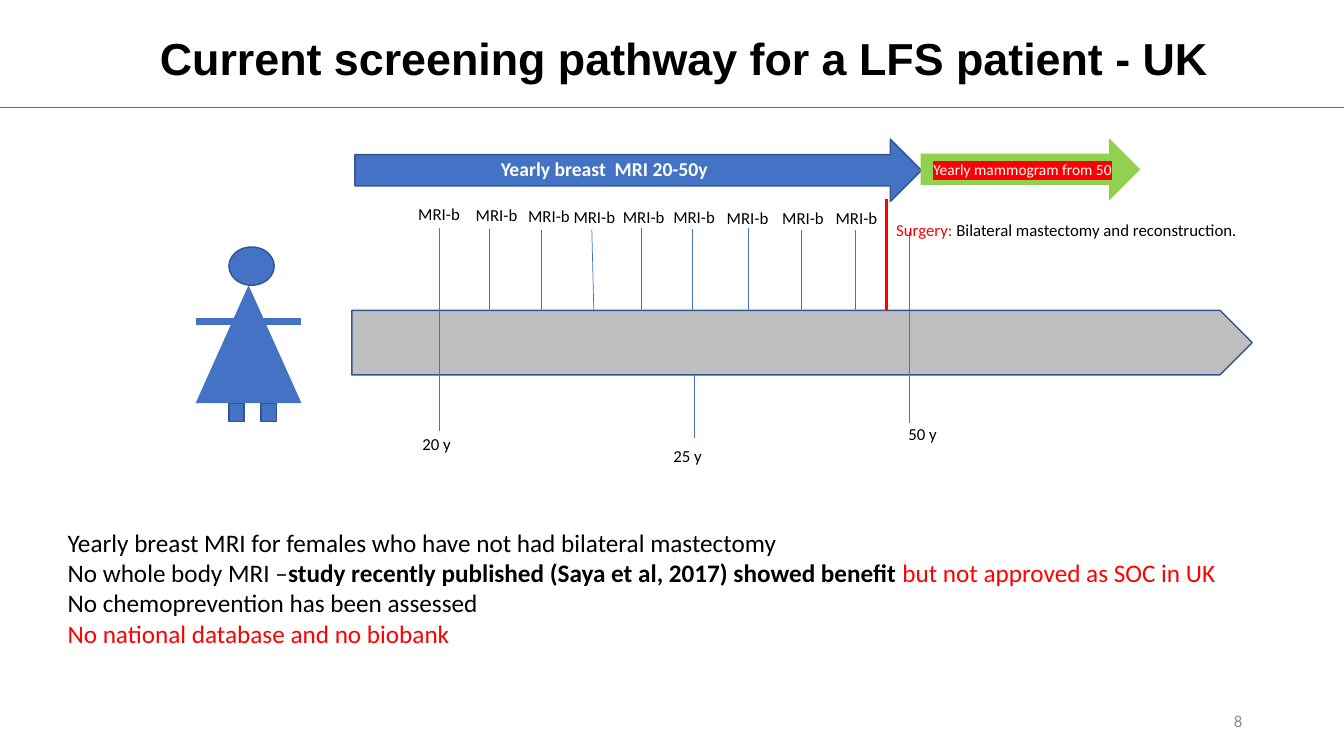
from dataclasses import dataclass
from typing import Any

from lxml.etree import SubElement
from pptx import Presentation
from pptx.dml.color import RGBColor
from pptx.enum.shapes import MSO_CONNECTOR, MSO_SHAPE as Preset
from pptx.enum.text import MSO_ANCHOR as Anchor, MSO_AUTO_SIZE as AutoSize, PP_ALIGN as Align
from pptx.oxml.ns import qn
from pptx.util import Emu, Pt

EMU_PER_PX = 9144  # 100 px to the inch
BLUE, EDGE, GREY, GREEN = "4472C4", "325491", "BFBFBF", "92D050"
BLACK, WHITE, RED, PALE = "000000", "FFFFFF", "FF0000", "8C8C8C"
INSETS = {"margin_left": 10, "margin_right": 10, "margin_top": 5, "margin_bottom": 5}


@dataclass(frozen=True)
class Box:
    left: int
    top: int
    width: int
    height: int


@dataclass(frozen=True)
class Piece:
    text: str
    color: str = BLACK
    bold: bool = False


@dataclass(frozen=True)
class Block:
    preset: Preset
    box: Box
    fill: str
    edge: str | None = EDGE


@dataclass(frozen=True)
class Rule:
    start: tuple[int, int]
    end: tuple[int, int]
    color: str = BLUE
    weight: float = 0.5


@dataclass(frozen=True)
class Label:
    box: Box
    pieces: tuple[Piece, ...]
    size: int = 12
    align: Align = Align.LEFT
    anchor: Anchor = Anchor.TOP


SCREENING_ARROW = Block(Preset.RIGHT_ARROW, Box(352, 138, 562, 62), BLUE)
MAMMOGRAM_ARROW = Block(Preset.RIGHT_ARROW, Box(913, 137, 218, 62), GREEN, None)
LIFELINE = Block(Preset.PENTAGON, Box(349, 308, 893, 64), GREY)
WOMAN = (
    Block(Preset.OVAL, Box(227, 245, 45, 38), BLUE),
    Block(Preset.ISOSCELES_TRIANGLE, Box(194, 283, 105, 117), BLUE, None),
    *(Block(Preset.RECTANGLE, Box(left, 400, 15, 18), BLUE) for left in (227, 259)),
)
ARMS = Rule((194, 319), (299, 319), BLUE, 4.5)

SCAN_TICKS = ((485, 227), (537, 228), (587, 228), (636, 226),
              (687, 227), (742, 226), (795, 228), (848, 228))
RULES = (
    Rule((0, 107), (1333, 107)),
    Rule((436, 226), (436, 428)),
    Rule((689, 372), (689, 435)),
    Rule((902, 230), (902, 420)),
    *(Rule((x, top), (589 if x == 587 else x, 309)) for x, top in SCAN_TICKS),
    Rule((879, 197), (879, 309), RED, 2.25),
)

SCAN_LABELS = ((405, 197), (462, 198), (514, 199), (559, 200), (608, 200),
               (658, 200), (711, 201), (766, 201), (819, 201))
AGES = (("20 y", 409, 425), ("25 y", 658, 437), ("50 y", 891, 415))
LABELS = (
    Label(Box(380, 151, 439, 34), (Piece("Yearly breast  MRI 20-50y", WHITE, True),),
          14, Align.CENTER),
    *(Label(Box(left, top, 70, 30), (Piece("MRI-b"),)) for left, top in SCAN_LABELS),
    *(Label(Box(left, top, 145, 30), (Piece(age),)) for age, left, top in AGES),
    Label(Box(879, 213, 401, 30),
          (Piece("Surgery: ", RED), Piece("Bilateral mastectomy and reconstruction."))),
    Label(Box(942, 695, 300, 40), (Piece("8", PALE),), 12, Align.RIGHT, Anchor.MIDDLE),
)

FINDINGS = (
    (Piece("Yearly breast MRI for females who have not had bilateral mastectomy"),),
    (Piece("No whole body MRI –"),
     Piece("study recently published (Saya et al, 2017) showed benefit ", bold=True),
     Piece("but not approved as SOC in UK", RED)),
    (Piece("No chemoprevention has been assessed"),),
    (Piece("No national database and no biobank", RED),),
)


def px(length: int) -> Emu:
    return Emu(length * EMU_PER_PX)


def rgb(color: str) -> RGBColor:
    return RGBColor.from_string(color)


def apply(target: Any, values: dict[str, Any]) -> None:
    for name, value in values.items():
        setattr(target, name, value)


def bounds(box: Box) -> tuple[Emu, ...]:
    return px(box.left), px(box.top), px(box.width), px(box.height)


def place(placeholder: Any, box: Box) -> None:
    apply(placeholder, dict(zip(("left", "top", "width", "height"), bounds(box))))


def set_frame(frame: Any, anchor: Anchor) -> None:
    apply(frame, {"word_wrap": True, "auto_size": AutoSize.NONE, "vertical_anchor": anchor})
    apply(frame, {side: px(inset) for side, inset in INSETS.items()})


def write(paragraph: Any, pieces: tuple[Piece, ...], size: int,
          align: Align = Align.LEFT, font: str = "Calibri") -> None:
    paragraph.alignment = align
    for piece in pieces:
        run = paragraph.add_run()
        run.text = piece.text
        apply(run.font, {"size": Pt(size), "bold": piece.bold, "name": font})
        run.font.color.rgb = rgb(piece.color)


def highlight(run: Any, color: str) -> None:
    properties = run.font._element
    marker = SubElement(properties, qn("a:highlight"))
    SubElement(marker, qn("a:srgbClr"), val=color)
    properties.find(qn("a:solidFill")).addnext(marker)


def draw_block(shapes: Any, block: Block) -> Any:
    shape = shapes.add_shape(block.preset, *bounds(block.box))
    shape.shadow.inherit = False
    shape.fill.solid()
    shape.fill.fore_color.rgb = rgb(block.fill)
    if block.edge:
        shape.line.color.rgb = rgb(block.edge)
        shape.line.width = Pt(1)
    else:
        shape.line.fill.background()
    return shape


def draw_rule(shapes: Any, rule: Rule) -> None:
    ends = (px(value) for value in rule.start + rule.end)
    line = shapes.add_connector(MSO_CONNECTOR.STRAIGHT, *ends)
    line.line.color.rgb = rgb(rule.color)
    line.line.width = Pt(rule.weight)
    SubElement(line._element.spPr, qn("a:effectLst"))


def draw_label(shapes: Any, label: Label) -> None:
    frame = shapes.add_textbox(*bounds(label.box)).text_frame
    set_frame(frame, label.anchor)
    write(frame.paragraphs[0], label.pieces, label.size, label.align)


def fill_title(title: Any) -> None:
    place(title, Box(133, 8, 1092, 105))
    set_frame(title.text_frame, Anchor.MIDDLE)
    heading = title.text_frame.paragraphs[0]
    heading.line_spacing = 0.9
    write(heading, (Piece("Current screening pathway for a LFS patient - UK", bold=True),),
          32, Align.CENTER, "Arial")


def fill_findings(body: Any) -> None:
    place(body, Box(57, 518, 1209, 162))
    frame = body.text_frame
    set_frame(frame, Anchor.TOP)
    for index, pieces in enumerate(FINDINGS):
        paragraph = frame.add_paragraph() if index else frame.paragraphs[0]
        apply(paragraph, {"space_before": Pt(0), "space_after": Pt(0), "line_spacing": 1.0})
        properties = paragraph._p.get_or_add_pPr()
        properties.set("marL", "0")
        properties.set("indent", "0")
        SubElement(properties, qn("a:buNone"))
        write(paragraph, pieces, 18)


def main() -> None:
    deck = Presentation()
    apply(deck, {"slide_width": px(1333), "slide_height": px(750)})
    slide = deck.slides.add_slide(deck.slide_layouts[1])
    shapes = slide.shapes
    fill_title(shapes.title)
    fill_findings(slide.placeholders[1])

    draw_block(shapes, SCREENING_ARROW)
    draw_block(shapes, LIFELINE)
    mammogram = draw_block(shapes, MAMMOGRAM_ARROW).text_frame
    set_frame(mammogram, Anchor.MIDDLE)
    write(mammogram.paragraphs[0], (Piece("Yearly mammogram from 50", WHITE),), 11, Align.CENTER)
    highlight(mammogram.paragraphs[0].runs[0], RED)

    woman = shapes.add_group_shape().shapes
    for part in WOMAN:
        draw_block(woman, part)
    draw_rule(woman, ARMS)
    for rule in RULES:
        draw_rule(shapes, rule)
    for label in LABELS:
        draw_label(shapes, label)
    deck.save("out.pptx")


if __name__ == "__main__":
    main()
